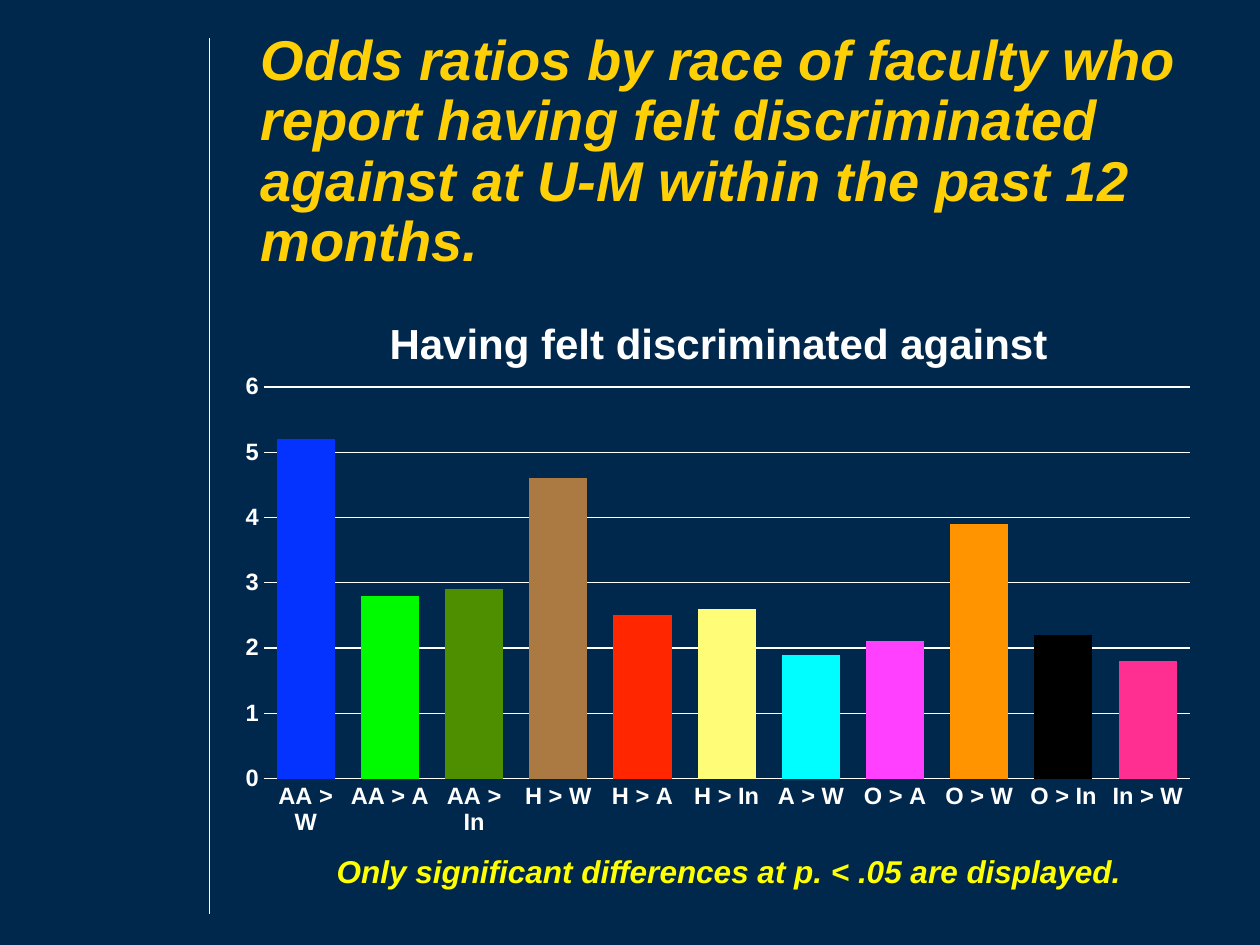
from lxml.etree import SubElement
from pptx import Presentation
from pptx.chart.data import CategoryChartData
from pptx.dml.color import RGBColor
from pptx.enum.chart import XL_CHART_TYPE, XL_TICK_MARK
from pptx.enum.shapes import MSO_CONNECTOR
from pptx.enum.text import MSO_ANCHOR, PP_ALIGN
from pptx.oxml import parse_xml
from pptx.oxml.ns import nsdecls, qn
from pptx.util import Inches, Pt

WIDTH, HEIGHT = 10, 7.5
FONT = "Arial"
COLORS = {
    "background": "00274C",
    "heading": "FFD006",
    "light": "FFFFFF",
    "note": "FFFF00",
}
ODDS_RATIOS = [
    ("AA > W", 5.2, "0432FF"),
    ("AA > A", 2.8, "00FA00"),
    ("AA > In", 2.9, "4E8F00"),
    ("H > W", 4.6, "AB7942"),
    ("H > A", 2.5, "FF2600"),
    ("H > In", 2.6, "FFFD78"),
    ("A > W", 1.9, "00FDFF"),
    ("O > A", 2.1, "FF40FF"),
    ("O > W", 3.9, "FF9300"),
    ("O > In", 2.2, "000000"),
    ("In > W", 1.8, "FF2F92"),
]


def share_box(left, top, width, height):
    return (
        Inches(WIDTH * left), Inches(HEIGHT * top),
        Inches(WIDTH * width), Inches(HEIGHT * height),
    )


def style_font(font, size, color, italic=False):
    font.name = FONT
    font.size = Pt(size)
    font.bold = True
    font.italic = italic
    font.color.rgb = RGBColor.from_string(color)


def style_line(line, width):
    line.color.rgb = RGBColor.from_string(COLORS["light"])
    line.width = Pt(width)


def add_divider(slide, box):
    left, top, width, height = box
    divider = slide.shapes.add_connector(
        MSO_CONNECTOR.STRAIGHT, left, top, left + width, top + height)
    style_line(divider.line, 0.5)
    SubElement(divider._element.spPr, qn("a:effectLst"))


def add_text(slide, box, text, size, color, alignment, line_spacing=1.0):
    frame = slide.shapes.add_textbox(*box).text_frame
    frame.word_wrap = True
    frame.vertical_anchor = MSO_ANCHOR.TOP
    paragraph = frame.paragraphs[0]
    paragraph.text = text
    paragraph.alignment = alignment
    paragraph.line_spacing = line_spacing
    style_font(paragraph.font, size, color, italic=True)


def place_chart_part(part, left, top, width=None, height=None):
    sizes = [("x", left), ("y", top)]
    target = ""
    if width is not None:
        sizes += [("w", width), ("h", height)]
        target = '<c:layoutTarget val="inner"/>'
    modes = "".join(f'<c:{name}Mode val="edge"/>' for name, _ in sizes[:2])
    values = "".join(f'<c:{name} val="{value}"/>' for name, value in sizes)
    layout = parse_xml(
        f'<c:layout {nsdecls("c")}><c:manualLayout>{target}{modes}{values}'
        "</c:manualLayout></c:layout>")
    for previous in part.findall(qn("c:layout")):
        part.remove(previous)
    text = part.find(qn("c:tx"))
    part.insert(0 if text is None else part.index(text) + 1, layout)


def add_odds_chart(slide, box):
    data = CategoryChartData()
    data.categories = [name for name, _, _ in ODDS_RATIOS]
    data.add_series("Series 1", [value for _, value, _ in ODDS_RATIOS])
    chart = slide.shapes.add_chart(
        XL_CHART_TYPE.COLUMN_CLUSTERED, *box, data).chart
    style_font(chart.font, 13.5, COLORS["light"])
    chart.has_legend = False

    chart.has_title = True
    title = chart.chart_title
    title.include_in_layout = False
    paragraph = title.text_frame.paragraphs[0]
    paragraph.text = "Having felt discriminated against"
    style_font(paragraph.font, 24, COLORS["light"])
    place_chart_part(title._element, 0.16, 0.04)
    place_chart_part(chart._chartSpace.chart.plotArea, 0.04, 0.18, 0.94, 0.7)

    for axis in (chart.category_axis, chart.value_axis):
        axis.major_tick_mark = XL_TICK_MARK.NONE
        axis.minor_tick_mark = XL_TICK_MARK.NONE
        style_font(axis.tick_labels.font, 13.5, COLORS["light"])
    style_line(chart.category_axis.format.line, 0.75)
    value_axis = chart.value_axis
    value_axis.minimum_scale, value_axis.maximum_scale = 0, 6
    value_axis.major_unit = 1
    value_axis.format.line.fill.background()
    style_line(value_axis.major_gridlines.format.line, 0.75)

    plot = chart.plots[0]
    plot.vary_by_categories = False
    plot.gap_width, plot.overlap = 45, -27
    for index, (_, _, color) in enumerate(ODDS_RATIOS):
        fill = plot.series[0].points[index].format.fill
        fill.solid()
        fill.fore_color.rgb = RGBColor.from_string(color)


def main():
    presentation = Presentation()
    presentation.slide_width = Inches(WIDTH)
    presentation.slide_height = Inches(HEIGHT)
    slide = presentation.slides.add_slide(presentation.slide_layouts[6])
    background = slide.background.fill
    background.solid()
    background.fore_color.rgb = RGBColor.from_string(COLORS["background"])

    add_divider(slide, share_box(0.166, 0.04, 0, 0.927))
    add_text(
        slide, share_box(0.197, 0.027, 0.763, 0.289),
        "Odds ratios by race of faculty who report having felt "
        "discriminated against at U-M within the past 12 months.",
        32, COLORS["heading"], PP_ALIGN.LEFT, 0.9)
    add_odds_chart(slide, share_box(0.178, 0.303, 0.782, 0.592))
    add_text(
        slide, share_box(0.246, 0.895, 0.665, 0.053),
        "Only significant differences at p. < .05 are displayed.",
        18, COLORS["note"], PP_ALIGN.CENTER)
    presentation.save("out.pptx")


if __name__ == "__main__":
    main()
